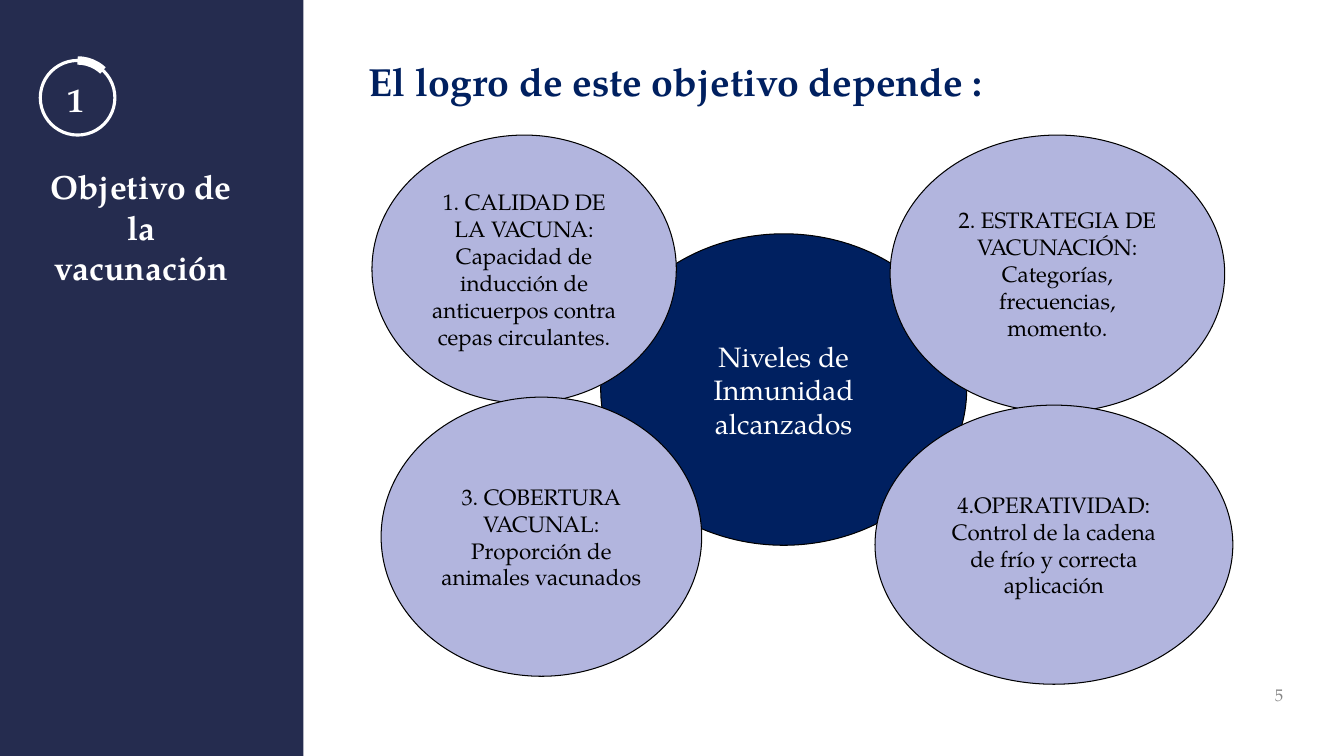
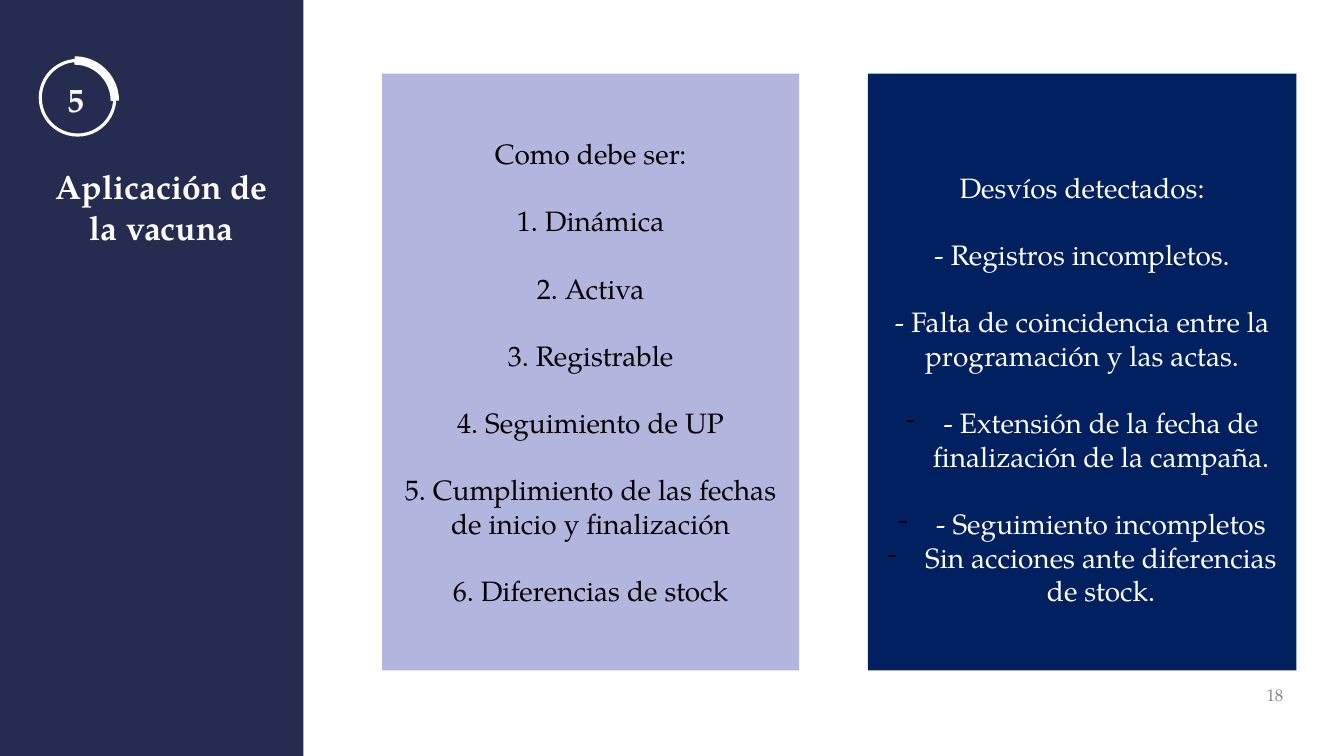
from dataclasses import dataclass

from lxml.etree import SubElement
from pptx import Presentation
from pptx.dml.color import RGBColor as RGB
from pptx.enum.shapes import MSO_SHAPE as SHAPE
from pptx.enum.text import MSO_ANCHOR as ANCHOR, PP_ALIGN as ALIGN
from pptx.oxml.ns import qn
from pptx.util import Pt


@dataclass(frozen=True)
class Theme:
    font: str = "TeX Gyre Pagella"
    band: RGB = RGB(0x25, 0x2C, 0x4F)
    navy: RGB = RGB(0x00, 0x20, 0x60)
    lilac: RGB = RGB(0xB2, 0xB5, 0xDE)
    white: RGB = RGB(0xFF, 0xFF, 0xFF)
    black: RGB = RGB(0x00, 0x00, 0x00)
    grey: RGB = RGB(0x88, 0x88, 0x88)
    heading: int = 28
    section: int = 24
    body: int = 20
    detail: int = 16
    footer: int = 12


@dataclass(frozen=True)
class Para:
    text: str
    gap: int = 0
    bullet: bool = False


class Deck:
    """Holds the theme, the presentation and the slide being built."""

    def __init__(self, theme):
        self.theme = theme
        self.prs = Presentation()
        self.prs.slide_width, self.prs.slide_height = Pt(960), Pt(540)
        self.slide = None

    def new_slide(self, section, section_width, number, page):
        t = self.theme
        self.slide = self.prs.slides.add_slide(self.prs.slide_layouts[6])
        self.shape(SHAPE.RECTANGLE, (0, 0, 216.7, 540), fill=t.band)
        self.text((707.8, 481.7, 216, 28.8), str(page), t.footer, t.grey,
                  align=ALIGN.RIGHT, anchor=ANCHOR.MIDDLE)
        self.text((41, 52.6, 53, 37.4), str(number), t.section, t.white, bold=True)
        self.shape(SHAPE.OVAL, (28.8, 43.2, 53.3, 53.3), line=t.white, weight=2.25)
        self.text((25.2, 111.6, section_width, 75.6), section, t.section, t.white,
                  bold=True, align=ALIGN.CENTER, inset=7.2)

    def shape(self, kind, box, fill=None, line=None, weight=0.75):
        sp = self.slide.shapes.add_shape(kind, *map(Pt, box))
        sp.shadow.inherit = False
        if fill is None:
            sp.fill.background()
        else:
            sp.fill.solid()
            sp.fill.fore_color.rgb = fill
        if line is None:
            sp.line.fill.background()
        else:
            sp.line.color.rgb = line
            sp.line.width = Pt(weight)
        return sp

    def progress_arc(self, box, end):
        """Thick arc from twelve o'clock to the angle end, in degrees."""
        sp = self.shape(SHAPE.ARC, box, line=self.theme.white, weight=6)
        for i, angle in enumerate((270, end)):
            sp.adjustments[i] = angle * 0.6  # 60000 units a degree, scaled by 100000

    def text(self, box, text, size, color, bold=False, align=ALIGN.LEFT,
             anchor=ANCHOR.TOP, inset=3.6):
        sp = self.slide.shapes.add_textbox(*map(Pt, box))
        self.fill_text(sp, [Para(text)], size, color, bold, align, anchor, inset)

    def ellipse(self, box, lines, size, fill, color):
        sp = self.shape(SHAPE.OVAL, box, fill, self.theme.black)
        self.fill_text(sp, [Para(s) for s in lines], size, color)

    def panel(self, box, paras, fill, color, drop=0):
        """Filled rectangle; its text sits lower than the middle by drop points."""
        sp = self.shape(SHAPE.RECTANGLE, box, fill)
        self.fill_text(sp, paras, self.theme.body, color)
        sp.text_frame.margin_top = Pt(7.2 + 2 * drop)

    def fill_text(self, sp, paras, size, color, bold=False, align=ALIGN.CENTER,
                  anchor=ANCHOR.MIDDLE, inset=7.2):
        tf = sp.text_frame
        tf.word_wrap = True
        tf.vertical_anchor = anchor
        tf.margin_left = tf.margin_right = Pt(7.2)
        tf.margin_top = tf.margin_bottom = Pt(inset)
        for i, para in enumerate(paras):
            p = tf.add_paragraph() if i else tf.paragraphs[0]
            p.alignment = align
            p.space_before = Pt(para.gap)
            if para.bullet:
                self.add_dash(p)
            r = p.add_run()
            r.text = para.text
            r.font.name = self.theme.font
            r.font.size = Pt(size)
            r.font.bold = bold
            r.font.color.rgb = color

    def add_dash(self, p):
        pPr = p._p.get_or_add_pPr()
        pPr.set("marL", str(int(Pt(27))))
        pPr.set("indent", str(-int(Pt(27))))
        clr = SubElement(pPr, qn("a:buClr"))
        SubElement(clr, qn("a:srgbClr"), val=str(self.theme.black))
        SubElement(pPr, qn("a:buFont"), typeface=self.theme.font)
        SubElement(pPr, qn("a:buChar"), char="-")


def objective_slide(deck):
    t = deck.theme
    deck.new_slide("Objetivo de la vacunación", 151.2, 1, 5)
    deck.progress_arc((28.8, 43.2, 53.3, 53.3), 313)
    deck.text((256.3, 37.4, 604.8, 45), "El logro de este objetivo depende :",
              t.heading, t.navy, bold=True)
    deck.ellipse((429.1, 167, 261.4, 222.5), ["Niveles de Inmunidad alcanzados"],
                 t.body, t.navy, t.white)
    factors = [
        ((265.7, 96.5, 217.4, 191.5),
         ["1. CALIDAD DE LA VACUNA: Capacidad de inducción de anticuerpos "
          "contra cepas circulantes."]),
        ((635.8, 96.5, 239, 198),
         ["2. ESTRATEGIA DE", "VACUNACIÓN:", "Categorías,", "frecuencias,", "momento."]),
        ((272.2, 283.7, 229, 199.4),
         ["3. COBERTURA VACUNAL: Proporción de animales vacunados"]),
        ((625, 289.4, 255.6, 199.4),
         ["4.OPERATIVIDAD: Control de la cadena de frío y correcta aplicación"]),
    ]
    for box, lines in factors:
        deck.ellipse(box, lines, t.detail, t.lilac, t.black)


def application_slide(deck):
    t = deck.theme
    gap = 24
    deck.new_slide("Aplicación de la vacuna", 180.7, 5, 18)
    deck.progress_arc((24.5, 43.2, 57.6, 57.6), 0)
    deck.panel((272.9, 52.6, 298, 426.2), [
        Para("Como debe ser:"),
        Para("1. Dinámica", gap),
        Para("2. Activa", gap),
        Para("3. Registrable", gap),
        Para("4. Seguimiento de UP", gap),
        Para("5. Cumplimiento de las fechas", gap),
        Para("de inicio y finalización"),
        Para("6. Diferencias de stock", gap),
    ], t.lilac, t.black)
    deck.panel((620, 52.6, 306, 426.2), [
        Para("Desvíos detectados:"),
        Para("- Registros incompletos.", gap),
        Para("- Falta de coincidencia entre la programación y las actas.", gap),
        Para("- Extensión de la fecha de finalización de la campaña.", gap, True),
        Para("- Seguimiento incompletos", gap, True),
        Para("Sin acciones ante diferencias de stock.", bullet=True),
    ], t.navy, t.white, drop=12)


def main():
    deck = Deck(Theme())
    objective_slide(deck)
    application_slide(deck)
    deck.prs.save("out.pptx")


if __name__ == "__main__":
    main()
